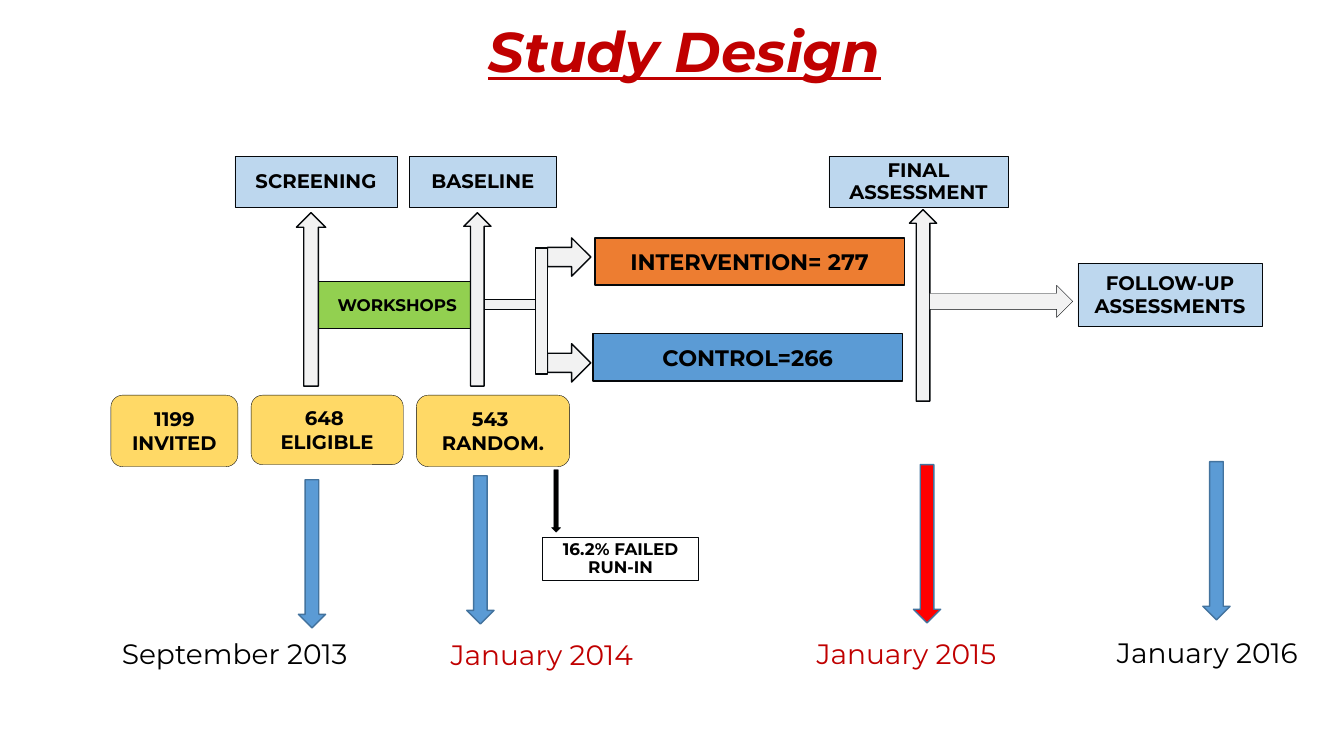
"""Build the study design flow slide."""
from pptx import Presentation
from pptx import util as u
from pptx.dml.color import RGBColor
from pptx.enum import shapes, text

PX = 9144
KIND = shapes.MSO_SHAPE
COLOURS = {
    "white": "FFFFFF", "black": "000000", "outline": "05080B", "edge": "43739E",
    "stage": "BDD7EE", "count": "FFD966", "green": "92D050", "orange": "ED7D31",
    "blue": "5B9BD5", "grey": "F2F2F2", "red": "FF0000", "crimson": "C00000",
}


def colour(name):
    return RGBColor.from_string(COLOURS[name])


def lengths(area):
    return [u.Emu(value * PX) for value in area]


def write(box, lines, size, ink="black", align=text.PP_ALIGN.CENTER, spacing=None, **style):
    frame = box.text_frame
    frame.word_wrap = True
    frame.auto_size = text.MSO_AUTO_SIZE.NONE
    for index, line in enumerate(lines):
        para = frame.paragraphs[0] if index == 0 else frame.add_paragraph()
        para.alignment = align
        if spacing:
            para.line_spacing = spacing
        span = para.add_run()
        span.text = line
        span.font.color.rgb = colour(ink)
        for name, value in {"name": "Montserrat", "size": u.Pt(size), **style}.items():
            setattr(span.font, name, value)


def add_block(page, kind, area, fill, weight=1, line="outline"):
    block = page.shapes.add_shape(kind, *lengths(area))
    block.shadow.inherit = False
    block.fill.solid()
    block.fill.fore_color.rgb = colour(fill)
    block.line.color.rgb = colour(line)
    block.line.width = u.Pt(weight)
    return block


def add_box(page, lines, area, fill, size=14, kind=KIND.RECTANGLE, weight=0.25, spacing=None):
    box = add_block(page, kind, area, fill, weight)
    box.text_frame.vertical_anchor = text.MSO_ANCHOR.MIDDLE
    write(box, lines, size, spacing=spacing, bold=True)


def add_date(page, label, left, top, width, ink):
    box = page.shapes.add_textbox(*lengths((left, top, width, 44)))
    write(box, [label], 20, ink, align=text.PP_ALIGN.LEFT)


def add_title(page, label):
    title = page.shapes.title
    title.left, title.top, title.width, title.height = lengths((104, -24, 1150, 156))
    title.text_frame.vertical_anchor = text.MSO_ANCHOR.MIDDLE
    write(title, [label], 40, "crimson", spacing=0.9, bold=True, italic=True, underline=True)


def main():
    deck = Presentation()
    deck.slide_width, deck.slide_height = lengths((1333, 750))
    page = deck.slides.add_slide(deck.slide_layouts[5])
    add_title(page, "Study Design")

    for lines, area in (
        (["1199 INVITED"], (110, 392, 126, 71)),
        (["648 ", "ELIGIBLE"], (249, 392, 151, 69)),
        (["543 ", "RANDOM."], (413, 392, 152, 71)),
    ):
        add_box(page, lines, area, "count", kind=KIND.ROUNDED_RECTANGLE)

    for label, area, fill, size in (
        ("WORKSHOPS", (316, 279, 156, 47), "green", 12),
        ("INTERVENTION= 277", (590, 236, 307, 47), "orange", 16),
        ("CONTROL=266", (588, 331, 307, 47), "blue", 16),
    ):
        add_box(page, [label], area, fill, size, weight=1)

    for kind, area in (
        (KIND.RIGHT_ARROW, (543, 236, 43, 38)),
        (KIND.RIGHT_ARROW, (543, 341, 43, 38)),
        (KIND.RECTANGLE, (479, 297, 52, 10)),
        (KIND.RECTANGLE, (531, 246, 12, 125)),
        (KIND.UP_ARROW, (294, 211, 29, 172)),
        (KIND.UP_ARROW, (460, 211, 27, 172)),
        (KIND.UP_ARROW, (902, 208, 27, 190)),
    ):
        add_block(page, kind, area, "grey")
    add_block(page, KIND.RIGHT_ARROW, (922, 283, 142, 32), "grey", 0.25)
    add_block(page, KIND.DOWN_ARROW, (547, 466, 9, 62), "black", 0.25)

    for label, area, fill, size, spacing in (
        ("SCREENING", (233, 155, 161, 51), "stage", 14, 0.93),
        ("BASELINE", (406, 155, 146, 51), "stage", 14, 0.93),
        ("FINAL ASSESSMENT", (822, 155, 178, 51), "stage", 14, 0.93),
        ("FOLLOW-UP ASSESSMENTS", (1069, 261, 183, 63), "stage", 14, u.Pt(16)),
        ("16.2% FAILED RUN-IN", (538, 533, 155, 43), "white", 12, 0.93),
    ):
        add_box(page, [label], area, fill, size, spacing=spacing)

    for left, top, height, fill in (
        (296, 476, 147, "blue"),
        (463, 472, 147, "blue"),
        (906, 461, 157, "red"),
        (1193, 458, 157, "blue"),
    ):
        add_block(page, KIND.DOWN_ARROW, (left, top, 27, height), fill, line="edge")

    for label, left, top, width, ink in (
        ("September 2013", 111, 627, 272, "black"),
        ("January 2014", 437, 628, 229, "crimson"),
        ("January 2015", 800, 627, 229, "crimson"),
        ("January 2016", 1098, 626, 229, "black"),
    ):
        add_date(page, label, left, top, width, ink)

    deck.save("out.pptx")


if __name__ == "__main__":
    main()
